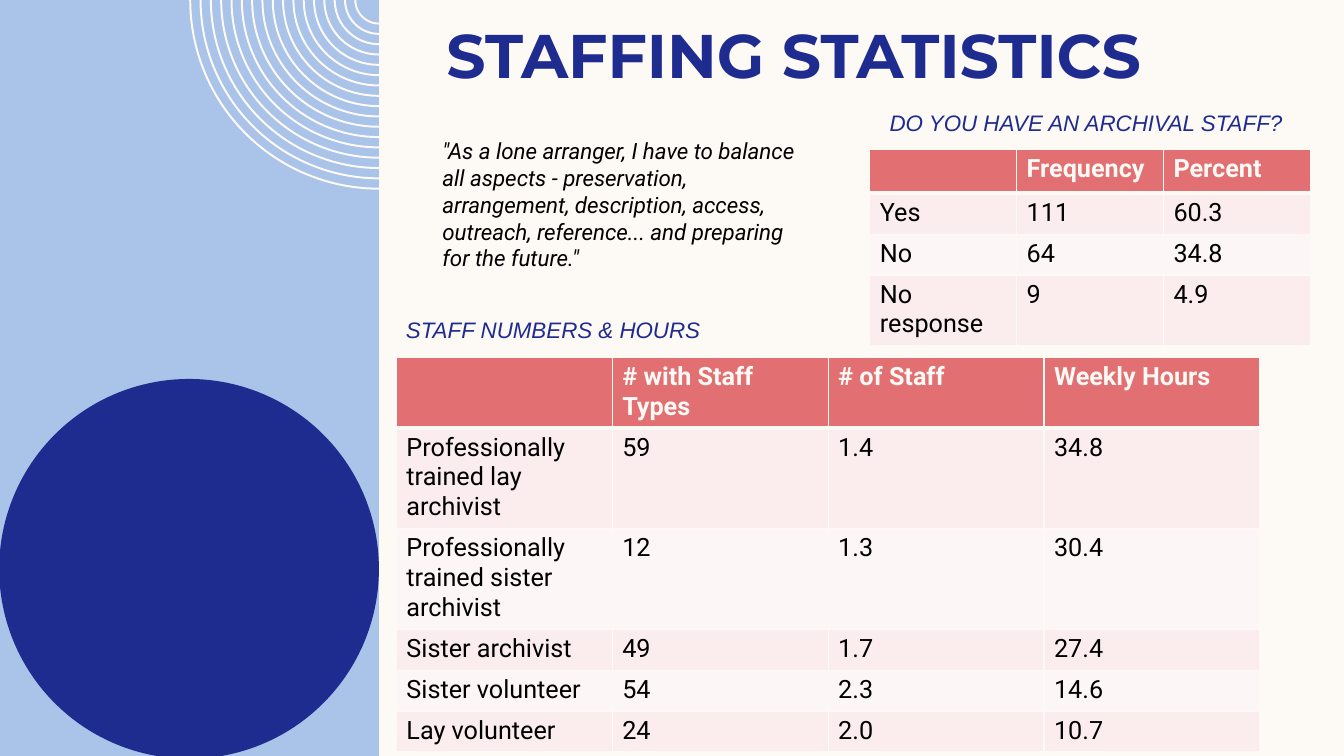
"""Build the staffing statistics slide with two survey tables."""
import lxml.etree
import pptx
import pptx.dml.color
import pptx.enum.shapes
import pptx.enum.text
import pptx.oxml.ns
import pptx.util

Cm = pptx.util.Cm
Pt = pptx.util.Pt
qn = pptx.oxml.ns.qn
CREAM, NAVY, SKY, CORAL, BLACK = "FDFAF6", "1F2C8F", "AAC3E8", "E26F72", "000000"
BANDS = ["FBEDED", "FDF6F6"]


def paint(fill, color):
    """Make a fill solid in a hex colour."""
    fill.solid()
    fill.fore_color.rgb = pptx.dml.color.RGBColor.from_string(color)


def write(frame, text, size, font, color, bold=False, italic=False):
    """Put one styled paragraph into a text frame."""
    para = frame.paragraphs[0]
    para.text = text
    para.font.size = Pt(size)
    para.font.name = font
    para.font.bold = bold
    para.font.italic = italic
    paint(para.font.fill, color)


deck = pptx.Presentation()
deck.slide_width, deck.slide_height = Cm(33.87), Cm(19.05)
page = deck.slides.add_slide(deck.slide_layouts[6])
paint(page.background.fill, CREAM)

panel = page.shapes.add_shape(
    pptx.enum.shapes.MSO_SHAPE.RECTANGLE, Cm(-0.02), Cm(0), Cm(9.57), Cm(19.13))

panel_right = Cm(9.55)
radii = [(Cm(4.78 - 0.26 * ring), Cm(4.73 - 0.26 * ring)) for ring in range(17)]
builder = page.shapes.build_freeform(panel_right - radii[0][0], 0)
for ring, (outer, inner) in enumerate(radii):
    if ring:
        builder.move_to(panel_right - outer, 0)
    builder.add_line_segments(
        [(panel_right, outer), (panel_right, inner), (panel_right - inner, 0)], close=True)
rings = builder.convert_to_shape()

segments = list(rings._element.iter(qn("a:lnTo")))
for ring, (outer, inner) in enumerate(radii):
    for chord, radius, start, sweep in ((0, outer, 180, -90), (2, inner, 90, 90)):
        segment = segments[3 * ring + chord]
        arc = lxml.etree.Element(
            qn("a:arcTo"), wR=str(radius), hR=str(radius),
            stAng=str(start * 60000), swAng=str(sweep * 60000))
        segment.getparent().replace(segment, arc)

disc = page.shapes.add_shape(
    pptx.enum.shapes.MSO_SHAPE.OVAL, Cm(-0.02), Cm(9.55), Cm(9.57), Cm(9.57))

for shape, color in ((panel, SKY), (rings, CREAM), (disc, NAVY)):
    shape.shadow.inherit = False
    shape.line.fill.background()
    paint(shape.fill, color)

quote = ('"As a lone arranger, I have to balance all aspects - preservation, '
         'arrangement, description, access, outreach, reference... '
         'and preparing for the future."')
texts = [
    ("STAFFING STATISTICS", (11, 0.3, 22.68, 2.13), 44, "Montserrat", NAVY, True, False),
    ("DO YOU HAVE AN ARCHIVAL STAFF?", (22.17, 2.62, 10.62, 1.14), 16, "Arial", NAVY, False, True),
    ("STAFF NUMBERS & HOURS", (9.98, 7.85, 10.62, 1.14), 16, "Arial", NAVY, False, True),
    (quote, (10.9, 3.33, 9.4, 3), 16, "Roboto", BLACK, False, True),
]
for text, place, size, font, color, bold, italic in texts:
    box = page.shapes.add_textbox(*map(Cm, place))
    frame = box.text_frame
    frame.word_wrap = True
    if bold:
        frame.vertical_anchor = pptx.enum.text.MSO_ANCHOR.MIDDLE
    if text == quote:
        frame.auto_size = pptx.enum.text.MSO_AUTO_SIZE.SHAPE_TO_FIT_TEXT
    write(frame, text, size, font, color, bold, italic)

tables = [
    (21.92, 3.76, 3.7, [1.11, 1.03, 1.03, 1.73], [
        ["", "Frequency", "Percent"],
        ["Yes", "111", "60.3"],
        ["No", "64", "34.8"],
        ["No response", "9", "4.9"],
    ]),
    (9.99, 9, 5.44, [1.72, 2.51, 2.51, 1.03, 1.03, 1.03], [
        ["", "# with Staff Types", "# of Staff", "Weekly Hours"],
        ["Professionally trained lay archivist", "59", "1.4", "34.8"],
        ["Professionally trained sister archivist", "12", "1.3", "30.4"],
        ["Sister archivist", "49", "1.7", "27.4"],
        ["Sister volunteer", "54", "2.3", "14.6"],
        ["Lay volunteer", "24", "2.0", "10.7"],
    ]),
]
for left, top, column_width, heights, rows in tables:
    count = len(rows[0])
    table = page.shapes.add_table(
        len(rows), count, Cm(left), Cm(top), Cm(column_width * count), Cm(sum(heights))).table
    for column in table.columns:
        column.width = Cm(column_width)
    for row, (height, values) in enumerate(zip(heights, rows)):
        table.rows[row].height = Cm(height)
        header = row == 0
        for column, value in enumerate(values):
            cell = table.cell(row, column)
            properties = cell._tc.get_or_add_tcPr()
            for side in "LRTB":
                thick = (row, side) in ((0, "B"), (1, "T"))
                border = lxml.etree.SubElement(
                    properties, qn(f"a:ln{side}"), w=str(Pt(3 if thick else 1)))
                solid = lxml.etree.SubElement(border, qn("a:solidFill"))
                lxml.etree.SubElement(solid, qn("a:srgbClr"), val=CREAM)
            paint(cell.fill, CORAL if header else BANDS[(row - 1) % 2])
            write(cell.text_frame, value, 18, "Roboto", CREAM if header else BLACK, header)

deck.save("out.pptx")
